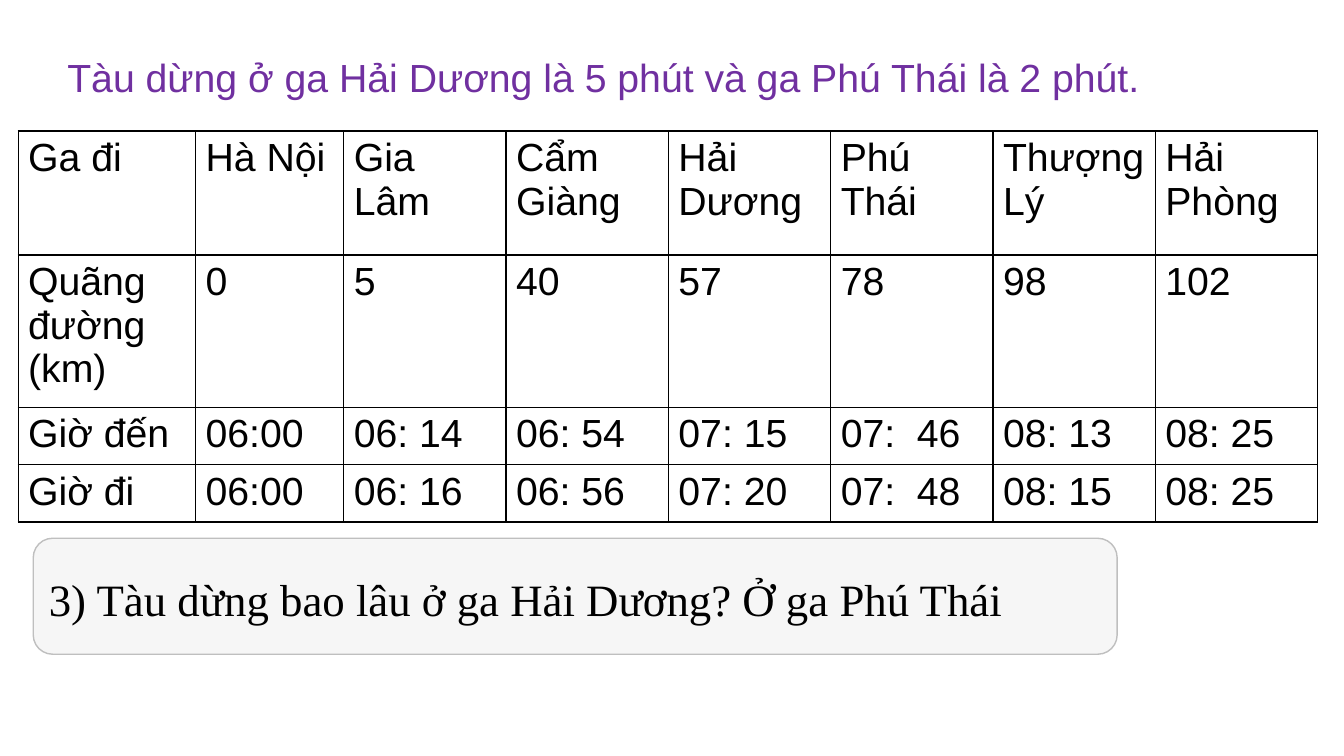
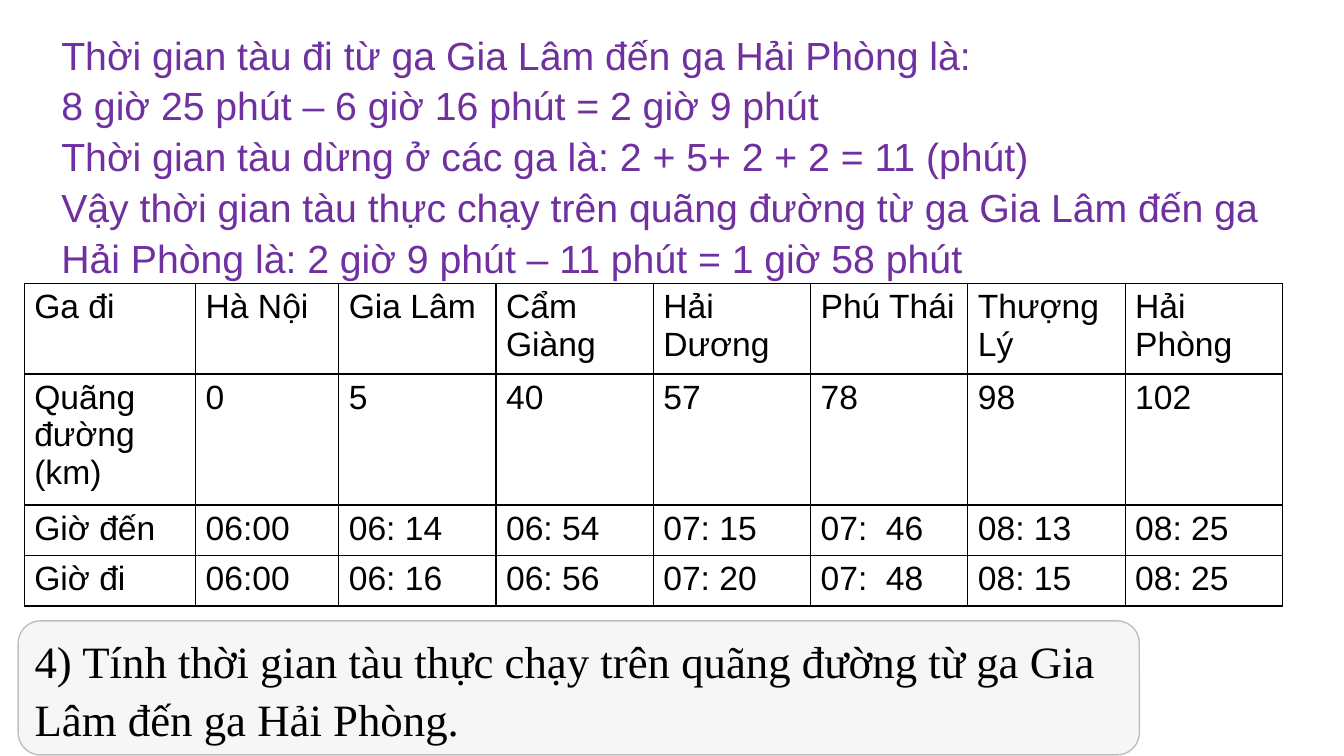
from lxml import etree
from pptx import Presentation
from pptx.dml.color import RGBColor
from pptx.enum.shapes import MSO_SHAPE
from pptx.enum.text import MSO_ANCHOR, PP_ALIGN
from pptx.oxml.ns import qn
from pptx.util import Inches, Pt

ROUNDED = MSO_SHAPE.ROUNDED_RECTANGLE
MIDDLE = MSO_ANCHOR.MIDDLE
LEFT = PP_ALIGN.LEFT

BLACK, PURPLE, PANEL, PANEL_LINE = "000000", "7030A0", "F2F2F2", "BFBFBF"
PANEL_OPACITY = 62
ANSWER = {"name": "Arial", "size": 28, "color": PURPLE}
QUESTION = {"name": "Times New Roman", "size": 32, "color": BLACK}
LINE_SPACING = 1.08

TIMETABLE = [
    ("Ga đi", "Hà Nội", "Gia Lâm", "Cẩm Giàng", "Hải Dương", "Phú Thái", "Thượng Lý", "Hải Phòng"),
    ("Quãng đường (km)", "0", "5", "40", "57", "78", "98", "102"),
    ("Giờ đến", "06:00", "06: 14", "06: 54", "07: 15", "07:  46", "08: 13", "08: 25"),
    ("Giờ đi", "06:00", "06: 16", "06: 56", "07: 20", "07:  48", "08: 15", "08: 25"),
]

SLIDES = [
    {
        "question": "3) Tàu dừng bao lâu ở ga Hải Dương? Ở ga Phú Thái",
        "question_at": (0.33, 5.34, 10.75, 1.15),
        "answer": ["Tàu dừng ở ga Hải Dương là 5 phút và ga Phú Thái là 2 phút."],
        "answer_at": (0.57, 0.44, 11.97, 0.57),
        "table_at": (0.18, 1.3),
        "cols": [1.76, 1.47] + [1.61] * 6,
        "rows": [1.23, 1.51, 0.57, 0.57],
        "table_size": 28,
    },
    {
        "question": "4) Tính thời gian tàu thực chạy trên quãng đường từ ga Gia Lâm đến ga Hải Phòng.",
        "question_at": (0.18, 6.16, 11.12, 1.33),
        "answer": [
            "Thời gian tàu đi từ ga Gia Lâm đến ga Hải Phòng là:",
            "8 giờ 25 phút – 6 giờ 16 phút = 2 giờ 9 phút",
            "Thời gian tàu dừng ở các ga là: 2 + 5+ 2 + 2 = 11 (phút)",
            "Vậy thời gian tàu thực chạy trên quãng đường từ ga Gia Lâm đến ga Hải Phòng là: "
            "2 giờ 9 phút – 11 phút = 1 giờ 58 phút",
        ],
        "answer_at": (0.51, 0.22, 12.41, 2.46),
        "table_at": (0.24, 2.81),
        "cols": [1.7, 1.42] + [1.56] * 6,
        "rows": [0.85, 1.22, 0.47, 0.47],
        "table_size": 24,
    },
]


def rgb(value):
    return RGBColor.from_string(value)


def inches(values):
    return [Inches(v) for v in values]


def write(tf, lines, style, spacing=None):
    """Fill a text frame with one left-aligned paragraph per line."""
    tf.word_wrap = True
    for i, line in enumerate(lines):
        p = tf.paragraphs[0] if i == 0 else tf.add_paragraph()
        p.alignment = LEFT
        p.line_spacing = spacing
        r = p.add_run()
        r.text = line
        for key, value in {"name": style["name"], "size": Pt(style["size"])}.items():
            setattr(r.font, key, value)
        r.font.color.rgb = rgb(style["color"])


def add_question(s, text, at):
    sp = s.shapes.add_shape(ROUNDED, *inches(at))
    sp.shadow.inherit = False
    sp.fill.solid()
    sp.fill.fore_color.rgb = rgb(PANEL)
    color = sp.fill._xPr.find(".//" + qn("a:srgbClr"))
    etree.SubElement(color, qn("a:alpha"), val=str(PANEL_OPACITY * 1000))
    sp.line.color.rgb = rgb(PANEL_LINE)
    sp.line.width = Pt(1)
    sp.text_frame.vertical_anchor = MIDDLE
    write(sp.text_frame, [text], QUESTION, LINE_SPACING)


def set_borders(cell):
    tc_pr = cell._tc.get_or_add_tcPr()
    for i, side in enumerate(("lnL", "lnR", "lnT", "lnB")):
        ln = etree.Element(qn("a:" + side), w=str(Pt(1)))
        fill = etree.SubElement(ln, qn("a:solidFill"))
        etree.SubElement(fill, qn("a:srgbClr"), val=BLACK)
        tc_pr.insert(i, ln)


def add_timetable(s, at, cols, rows, size):
    frame = s.shapes.add_table(len(rows), len(cols), *inches((*at, sum(cols), sum(rows))))
    table = frame.table
    table.first_row = table.horz_banding = False
    for column, width in zip(table.columns, cols):
        column.width = Inches(width)
    for row, height, texts in zip(table.rows, rows, TIMETABLE):
        row.height = Inches(height)
        for cell, text in zip(row.cells, texts):
            cell.fill.background()
            set_borders(cell)
            write(cell.text_frame, [text], {"name": "Arial", "size": size, "color": BLACK})


def add_answer(s, lines, at):
    tb = s.shapes.add_textbox(*inches(at))
    write(tb.text_frame, lines, ANSWER, LINE_SPACING)


def main():
    prs = Presentation()
    prs.slide_width, prs.slide_height = Inches(13.33), Inches(7.5)
    blank = prs.slide_layouts[6]
    for data in SLIDES:
        s = prs.slides.add_slide(blank)
        add_question(s, data["question"], data["question_at"])
        add_timetable(s, data["table_at"], data["cols"], data["rows"], data["table_size"])
        add_answer(s, data["answer"], data["answer_at"])
    prs.save("out.pptx")


if __name__ == "__main__":
    main()
